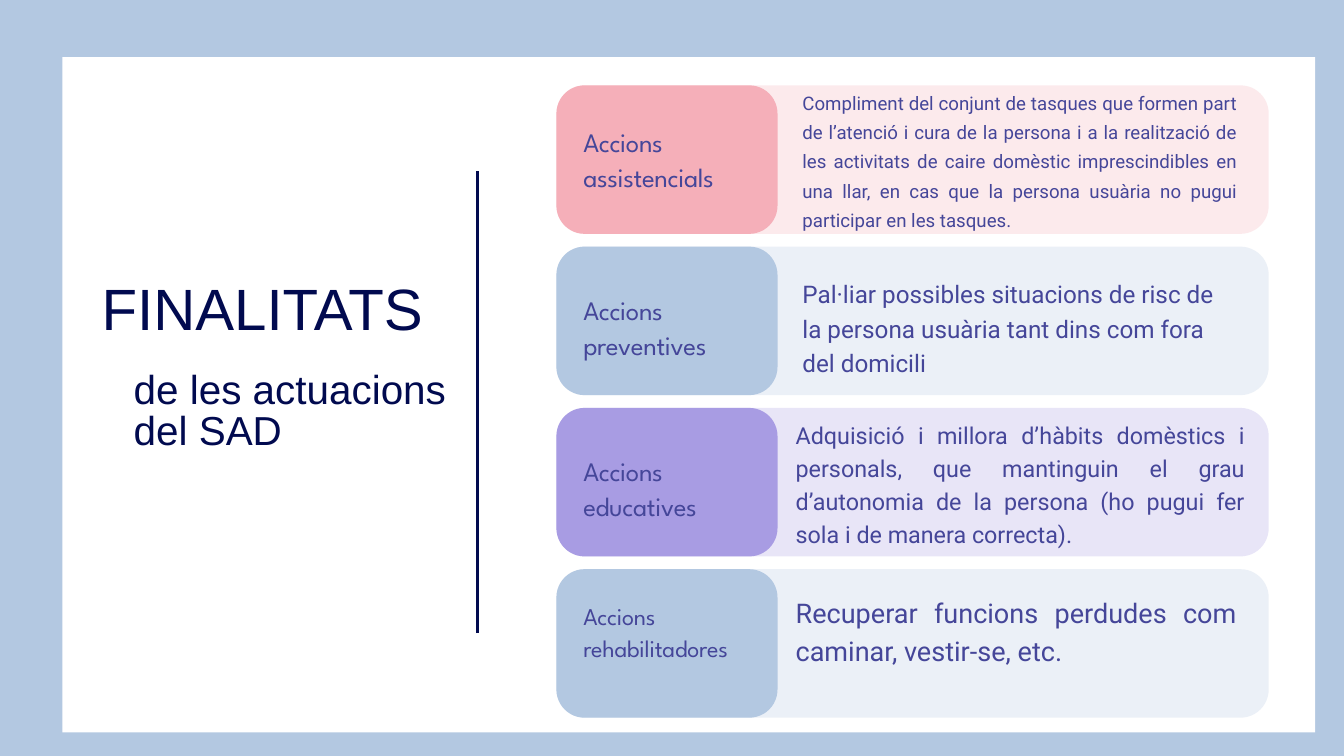
from lxml import etree
from pptx import Presentation
from pptx.dml.color import RGBColor
from pptx.enum import shapes, text
from pptx.oxml.ns import qn
from pptx.util import Inches, Pt

NAVY = RGBColor(0x01, 0x0A, 0x4F)
INDIGO = RGBColor(0x45, 0x46, 0x99)
WHITE = RGBColor(0xFF, 0xFF, 0xFF)
PINK = RGBColor(0xF5, 0xAF, 0xB9)
BLUE = RGBColor(0xB3, 0xC8, 0xE1)
PURPLE = RGBColor(0xA8, 0x9C, 0xE3)

LEFT, JUSTIFY = text.PP_ALIGN.LEFT, text.PP_ALIGN.JUSTIFY

# Card grid
CARD_X, CARD_Y, CARD_H, PITCH = 8.28, 1.27, 2.21, 2.4
CARD_W, TAB_W, RADIUS = 10.6, 3.29, 0.42
LABEL_X = 8.68

# colour, label and body; each text with its box and format
CARDS = [
    (PINK,
     ("Accions assistencials", (1.84, 2.63, 1.02), dict(size=28.6, line=37.1, spacing=-0.3)),
     ("Compliment del conjunt de tasques que formen part de l’atenció i cura de la "
      "persona i a la realització de les activitats de caire domèstic imprescindibles "
      "en una llar, en cas que la persona usuària no pugui participar en les tasques.",
      (11.94, 1.27, 6.47, 2.14), dict(size=20, line=31.2, align=JUSTIFY))),
    (BLUE,
     ("Accions preventives", (4.34, 2.46, 1.02), dict(size=28.6, line=37.1, spacing=-0.3)),
     ("Pal·liar possibles situacions de risc de la persona usuària tant dins com fora "
      "del domicili",
      (11.94, 4.08, 6.49, 1.51), dict(size=26, line=36.9))),
    (PURPLE,
     ("Accions educatives", (6.73, 2.33, 1.02), dict(size=28.6, line=37.1, spacing=-0.3)),
     ("Adquisició i millora d’hàbits domèstics i personals, que mantinguin el grau "
      "d’autonomia de la persona (ho pugui fer sola i de manera correcta).",
      (11.84, 6.19, 6.68, 1.94), dict(size=25, line=35.5, align=JUSTIFY))),
    (BLUE,
     ("Accions rehabilitadores", (8.92, 3.06, 0.9), dict(size=25.8, line=33.6, spacing=-0.2)),
     ("Recuperar funcions perdudes com caminar, vestir-se, etc.",
      (11.84, 8.79, 6.57, 1.12), dict(size=29, line=41.1, align=JUSTIFY))),
]


def place(sp, x, y, w, h):
    sp.left, sp.top, sp.width, sp.height = (Inches(v) for v in (x, y, w, h))


def write(sp, content, size, line, font="Roboto", color=INDIGO, align=LEFT, spacing=0):
    tf = sp.text_frame
    tf.word_wrap = True
    tf.auto_size = text.MSO_AUTO_SIZE.SHAPE_TO_FIT_TEXT
    tf.vertical_anchor = text.MSO_ANCHOR.TOP
    tf.margin_left = tf.margin_top = tf.margin_right = tf.margin_bottom = 0
    p = tf.paragraphs[0]
    p.alignment = align
    p.line_spacing = Pt(line)
    p.space_before = Pt(0)
    r = p.add_run()
    r.text = content
    r.font.size = Pt(size)
    r.font.name = font
    r.font.color.rgb = color
    if spacing:
        r.font._element.set("spc", str(round(spacing * 100)))


def add_text(s, content, box, **fmt):
    sp = s.shapes.add_textbox(*(Inches(v) for v in box))
    write(sp, content, **fmt)


def add_block(s, kind, x, y, w, h, color, alpha=None):
    sp = s.shapes.add_shape(kind, *(Inches(v) for v in (x, y, w, h)))
    sp.shadow.inherit = False
    sp.fill.solid()
    sp.fill.fore_color.rgb = color
    sp.line.fill.background()
    if kind == shapes.MSO_SHAPE.ROUNDED_RECTANGLE:
        sp.adjustments[0] = RADIUS / h
    if alpha is not None:
        clr = sp.element.spPr.find(qn("a:solidFill"))[0]
        etree.SubElement(clr, qn("a:alpha")).set("val", str(alpha * 1000))
    return sp


def add_rule(s, x, y1, y2):
    ln = s.shapes.add_connector(shapes.MSO_CONNECTOR.STRAIGHT,
                                Inches(x), Inches(y1), Inches(x), Inches(y2))
    ln.line.color.rgb = NAVY
    ln.line.width = Pt(3)
    etree.SubElement(ln.element.spPr, qn("a:effectLst"))


def add_card(s, row, color, label, body):
    y = CARD_Y + row * PITCH
    rounded = shapes.MSO_SHAPE.ROUNDED_RECTANGLE
    add_block(s, rounded, CARD_X, y, CARD_W, CARD_H, color, alpha=26)
    add_block(s, rounded, CARD_X, y, TAB_W, CARD_H, color)
    content, box, fmt = label
    add_text(s, content, (LABEL_X, *box), font="League Spartan", **fmt)
    content, box, fmt = body
    add_text(s, content, box, **fmt)


def main():
    prs = Presentation()
    prs.slide_width, prs.slide_height = Inches(20), Inches(11.25)
    s = prs.slides.add_slide(prs.slide_layouts[5])
    s.background.fill.solid()
    s.background.fill.fore_color.rgb = BLUE

    # White panel, behind the title
    panel = add_block(s, shapes.MSO_SHAPE.RECTANGLE, 0.93, 0.85, 18.64, 10.05, WHITE)
    title = s.shapes.title
    title.element.addprevious(panel.element)

    # Heading
    place(title, 0.48, 4.44, 6.85, 0.74)
    write(title, "FINALITATS", size=62.4, line=46.8, font="Arial", color=NAVY,
          align=text.PP_ALIGN.CENTER)
    add_text(s, "de les actuacions del SAD", (1.99, 5.54, 5.13, 1.23),
             size=43.3, line=43.3, font="Arial", color=NAVY)
    add_rule(s, 7.11, 9.42, 2.54)

    # Cards
    for row, card in enumerate(CARDS):
        add_card(s, row, *card)

    prs.save("out.pptx")


if __name__ == "__main__":
    main()
